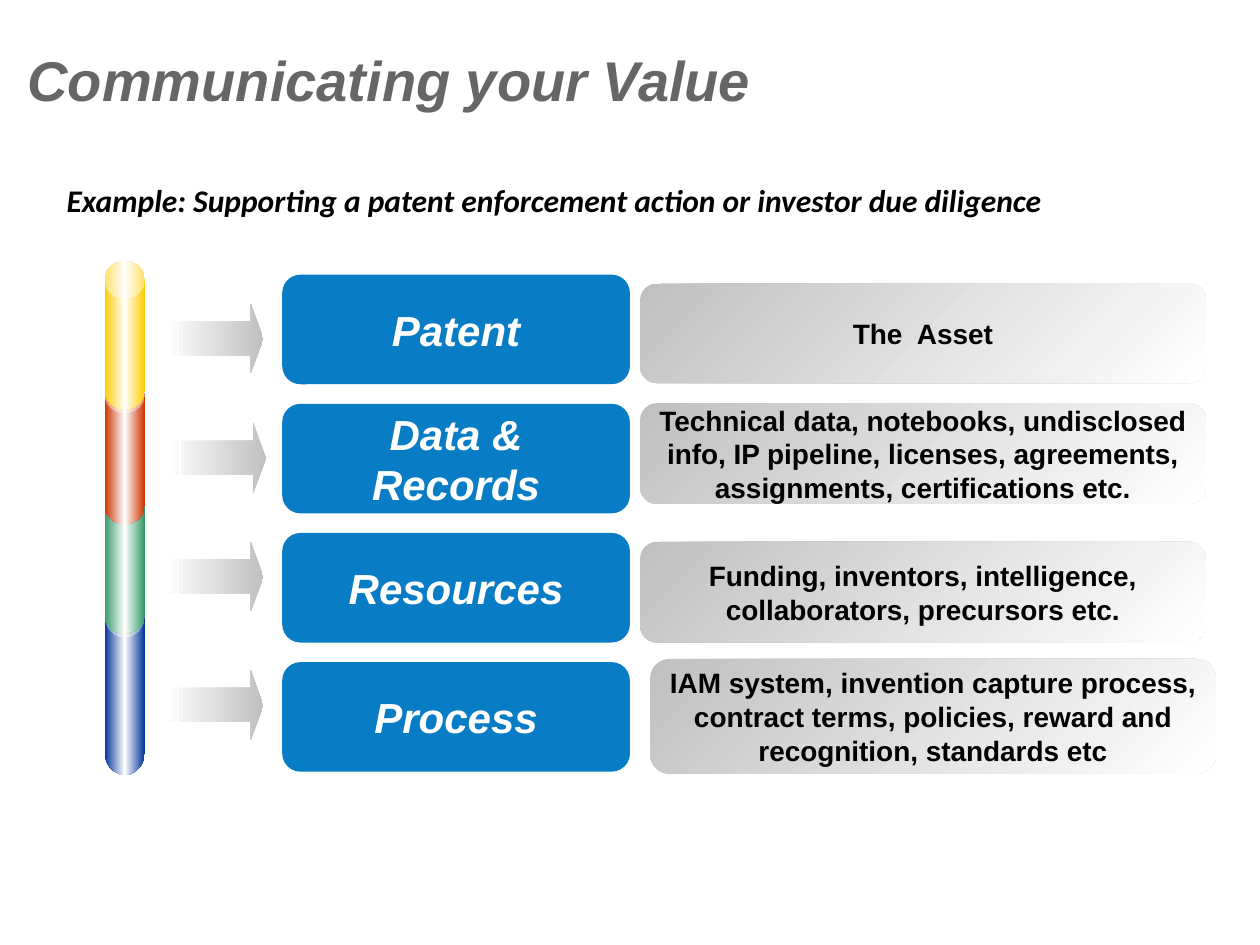
from copy import deepcopy

from pptx import Presentation
from pptx.dml.color import RGBColor
from pptx.enum.shapes import MSO_SHAPE
from pptx.enum.text import MSO_ANCHOR, PP_ALIGN
from pptx.oxml.ns import qn
from pptx.util import Inches, Pt

CAN, ROUND = MSO_SHAPE.CAN, MSO_SHAPE.ROUNDED_RECTANGLE
TOP, MIDDLE = MSO_ANCHOR.TOP, MSO_ANCHOR.MIDDLE
LEFT, CENTER = PP_ALIGN.LEFT, PP_ALIGN.CENTER

COLORS = {
    "title": "666666", "black": "000000", "white": "FFFFFF",
    "panel": "087CC4", "silver": "C0C0C0", "navy": "003399",
    "green": "339966", "red": "CC3300", "gold": "FFCC00",
}
TITLE = {"name": "Arial", "size": Pt(32), "bold": True, "italic": True}
LEAD = {"name": "Calibri", "size": Pt(18), "bold": True, "italic": True}
LABEL = {"name": "Arial", "size": Pt(24), "bold": True, "italic": True}
DETAIL = {"name": "Arial", "size": Pt(16), "bold": True, "italic": False}

# Pillar parts from back to front: top offset, height, cap depth, colour
PILLAR = [
    (2.62, 1.46, 1.155, "navy"),
    (1.78, 1.18, 0.934, "green"),
    (0.91, 1.18, 0.934, "red"),
    (0, 1.18, 0.939, "gold"),
]
# Rows: label, detail, arrow left and top, detail left, top and height
ROWS = [
    ("Patent", "The  Asset", (1.3, 2.41), (5.08, 2.25, 0.79)),
    ("Data & Records",
     "Technical data, notebooks, undisclosed info, IP pipeline, licenses, "
     "agreements, assignments, certifications etc.",
     (1.32, 3.36), (5.08, 3.2, 0.8)),
    ("Resources",
     "Funding, inventors, intelligence, collaborators, precursors etc.",
     (1.3, 4.3), (5.08, 4.3, 0.8)),
    ("Process",
     "IAM system, invention capture process, contract terms, policies, "
     "reward and recognition, standards etc",
     (1.3, 5.32), (5.16, 5.23, 0.91)),
]


def rgb(name):
    return RGBColor.from_string(COLORS[name])


def write(shape, text, style, color, align=CENTER, anchor=MIDDLE, wrap=True):
    frame = shape.text_frame
    frame.word_wrap = wrap
    frame.vertical_anchor = anchor
    para = frame.paragraphs[0]
    para.text = text
    para.alignment = align
    for key, value in style.items():
        setattr(para.font, key, value)
    para.font.color.rgb = rgb(color)


def shade(shape, names, angle=0):
    """Fill with evenly spaced colours; the angle runs clockwise."""
    fill = shape.fill
    fill.gradient()
    fill.gradient_angle = -angle % 360
    stops = shape._element.spPr.find(qn("a:gradFill")).find(qn("a:gsLst"))
    for _ in names[2:]:
        stops.append(deepcopy(stops[0]))
    for i, (stop, name) in enumerate(zip(fill.gradient_stops, names)):
        stop.position = i / (len(names) - 1)
        stop.color.rgb = rgb(name)


def plain(shape):
    """Remove shadow and outline."""
    shape.shadow.inherit = False
    shape.line.fill.background()
    return shape


def add_box(slide, kind, box, adjust):
    shape = slide.shapes.add_shape(kind, *map(Inches, box))
    shape.adjustments[0] = adjust
    return plain(shape)


def add_head(slide, box, text, style, color, **layout):
    shape = slide.shapes.add_textbox(*map(Inches, box))
    write(shape, text, style, color, align=LEFT, **layout)


def add_pillar(slide, left, top, width):
    for drop, height, cap, color in PILLAR:
        part = add_box(slide, CAN, (left, top + drop, width, height), cap)
        shade(part, (color, "white", color))


def add_arrow(slide, left, top):
    """Draw an arrow with two separate bars at its tail."""
    high, low = 0.14, 0.41
    arrow = [(0.69, 0), (0.69, high), (0.12, high), (0.12, low),
             (0.69, low), (0.69, 0.55), (0.79, 0.28)]
    bars = [[(a, high), (a, low), (b, low), (b, high)]
            for a, b in ((0.05, 0.1), (0, 0.02))]
    path = None
    for outline in (arrow, *bars):
        points = [(Inches(left + x), Inches(top + y)) for x, y in outline]
        if path is None:
            path = slide.shapes.build_freeform(*points[0])
        else:
            path.move_to(*points[0])
        path.add_line_segments(points[1:], close=True)
    shade(plain(path.convert_to_shape()), ("white", "silver"))


def add_label(slide, box, text):
    shape = add_box(slide, ROUND, box, 0.167)
    shape.fill.solid()
    shape.fill.fore_color.rgb = rgb("panel")
    write(shape, text, LABEL, "white")


def add_detail(slide, box, text):
    shape = add_box(slide, ROUND, box, 0.167)
    shade(shape, ("silver", "white"), 45)
    write(shape, text, DETAIL, "black")


def main():
    deck = Presentation()
    deck.slide_width, deck.slide_height = Inches(10), Inches(7.5)
    slide = deck.slides.add_slide(deck.slide_layouts[6])
    add_head(slide, (0.12, 0, 9.88, 1.25), "Communicating your Value",
             TITLE, "title")
    add_head(slide, (0.43, 1.39, 8.02, 0.4),
             "Example: Supporting a patent enforcement action or investor "
             "due diligence", LEAD, "black", anchor=TOP, wrap=False)
    add_pillar(slide, 0.83, 2.07, 0.32)
    for i, (label, detail, arrow, (left, top, height)) in enumerate(ROWS):
        add_arrow(slide, *arrow)
        add_label(slide, (2.24, 2.18 + 1.025 * i, 2.76, 0.87), label)
        add_detail(slide, (left, top, 4.49, height), detail)
    deck.save("out.pptx")


if __name__ == "__main__":
    main()
